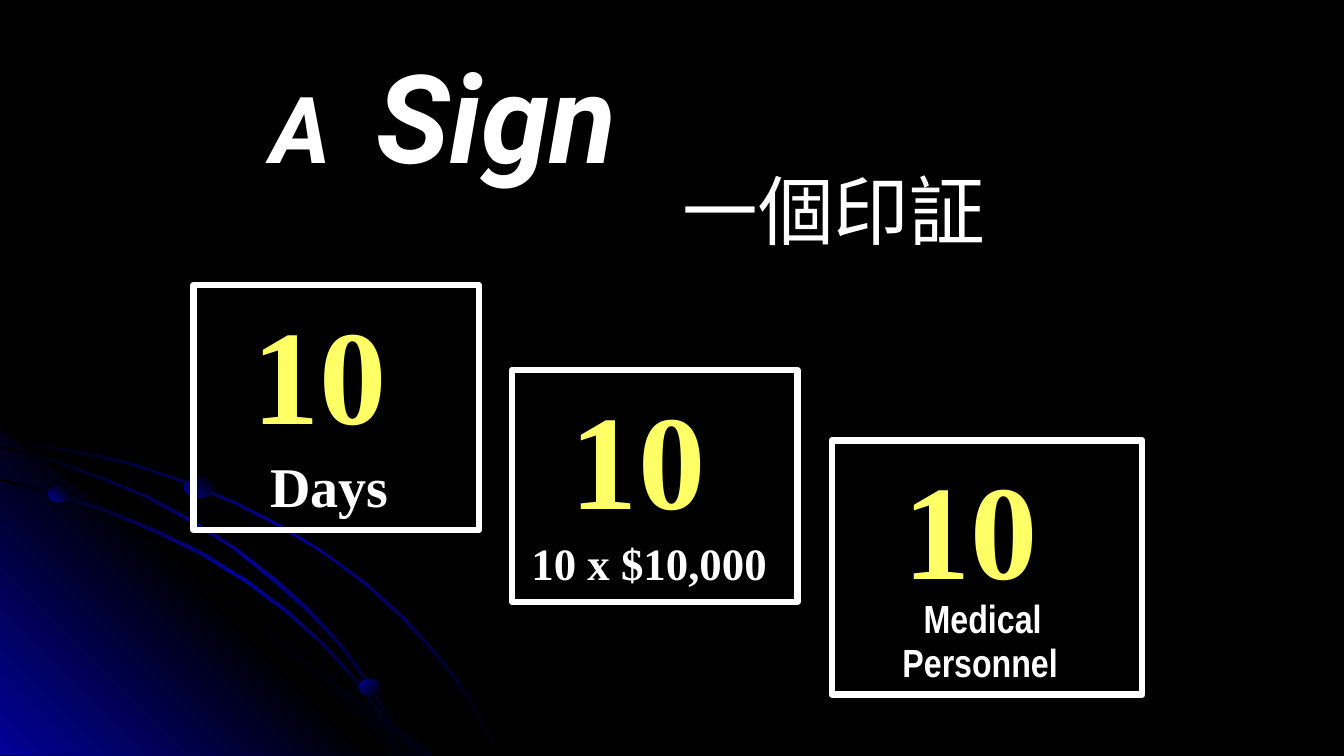
"""Build the 'A Sign' slide: three stepped boxes over a dark sky with blue arcs."""
from lxml.etree import SubElement
from pptx import Presentation
from pptx.dml.color import RGBColor
from pptx.enum.shapes import MSO_SHAPE
from pptx.enum.text import MSO_ANCHOR, PP_ALIGN
from pptx.oxml.ns import qn
from pptx.util import Inches, Pt

THEME = {
    "night": "000000", "blue": "010199", "white": "FFFFFF", "yellow": "FFFF66",
    "serif": "Times New Roman", "sans": "Arial", "narrow": "Arial Narrow",
    "display": "Roboto", "cjk": "Noto Sans CJK JP",
    "number": 96, "sign": 88, "article": 66, "gap": 60, "chinese": 54,
    "days": 40, "money": 32, "staff": 28, "border": 4.5,
}

GLOW = [(0, "night"), (50, "blue"), (100, "night")]
HAZE = [(0, "blue"), (50, "night"), (100, "blue")]
ORB = [(0, "blue"), (100, "night")]

SCENERY = [
    (GLOW, 45, [
        (0.76, 4.47), (0.37, 4.41), (0, 4.35), (0, 4.38), (0.37, 4.43), (0.75, 4.49),
        (1.29, 4.61), (1.8, 4.78), (2.31, 4.99), (2.78, 5.23), (3.21, 5.49), (3.61, 5.79),
        (3.97, 6.12), (4.31, 6.49), (4.5, 6.73), (4.67, 6.98), (4.81, 7.23), (4.93, 7.49),
        (4.96, 7.49), (4.83, 7.23), (4.69, 6.98), (4.53, 6.73), (4.33, 6.48), (4, 6.11),
        (3.63, 5.78), (3.22, 5.48), (2.79, 5.21), (2.32, 4.97), (1.82, 4.77), (1.31, 4.59)]),
    (HAZE, 315, [(4.29, 7.49), (0, 7.49), (0, 4.27)]),
    (GLOW, 45, [
        (3.8, 7.14), (3.92, 7.32), (4.01, 7.49), (4.04, 7.49), (3.94, 7.3), (3.82, 7.12),
        (3.55, 6.76), (3.23, 6.4), (2.86, 6.06), (2.46, 5.76), (2.03, 5.49), (1.56, 5.26),
        (1.05, 5.05), (0.54, 4.88), (0, 4.75), (0, 4.77), (0.51, 4.9), (1.03, 5.07),
        (1.53, 5.28), (2, 5.51), (2.44, 5.78), (2.84, 6.08), (3.21, 6.41), (3.53, 6.77)]),
    (GLOW, 45, [
        (0, 4.42), (0, 4.44), (0.49, 4.57), (0.99, 4.75), (1.46, 4.94), (1.89, 5.18),
        (2.31, 5.44), (2.69, 5.75), (3.03, 6.05), (3.37, 6.41), (3.56, 6.67), (3.74, 6.94),
        (3.89, 7.22), (4.01, 7.49), (4.04, 7.49), (3.91, 7.2), (3.76, 6.93), (3.58, 6.65),
        (3.39, 6.39), (3.06, 6.03), (2.72, 5.73), (2.33, 5.43), (1.91, 5.16), (1.49, 4.93),
        (1.01, 4.73), (0.51, 4.55)]),
]
ORBS = [
    (315, (0.48, 4.83, 0.2, 0.15)),
    (45, (3.56, 6.74, 0.21, 0.16)),
    (315, (1.83, 4.73, 0.28, 0.21)),
]

TEN = [("10 ", "number", "serif", "yellow", "b")]
BOXES = [
    ((1.92, 2.83, 2.83, 2.43), 1, [TEN, [("Days ", "days", "serif", "white", "b")]]),
    ((5.08, 3.67, 2.83, 2.3), 1, [TEN, [("10 x $10,000 ", "money", "serif", "white", "b")]]),
    ((8.25, 4.37, 3.08, 2.52), 0.7, [
        TEN,
        [("Medical ", "staff", "narrow", "white", "b")],
        [("Personnel", "staff", "narrow", "white", "b"),
         (" ", "days", "serif", "yellow", "b")]]),
]
BOX_LEAD = 11

TITLE = ((2.58, 0.35, 7, 1.58), [
    ("A ", "article", "display", "white", "bi"),
    (" ", "gap", "sans", "white", "i"),
    ("Sign", "sign", "display", "white", "bi")])
TITLE_LEAD = 6
CHINESE = ((6.67, 1.58, 3.23, 1.01), [("一個印証", "chinese", "cjk", "white", "")])


def color(key):
    return RGBColor.from_string(THEME[key])


def paint_gradient(shape, stops, angle):
    shape.shadow.inherit = False
    shape.line.fill.background()
    shape.fill.gradient()
    gradient = shape.fill._xPr.find(qn("a:gradFill"))
    for child in list(gradient):
        gradient.remove(child)
    stop_list = SubElement(gradient, qn("a:gsLst"))
    for position, key in stops:
        stop = SubElement(stop_list, qn("a:gs"), pos=str(position * 1000))
        SubElement(stop, qn("a:srgbClr"), val=THEME[key])
    SubElement(gradient, qn("a:lin"), ang=str(angle * 60000), scaled="0")


def write_runs(paragraph, runs):
    for text, size, face, ink, style in runs:
        run = paragraph.add_run()
        run.text = text
        font = run.font
        font.size = Pt(THEME[size])
        font.name = THEME[face]
        font.color.rgb = color(ink)
        font.bold = "b" in style
        font.italic = "i" in style
        SubElement(run._r.get_or_add_rPr(), qn("a:ea"), typeface=THEME[face])


def add_scenery(slide):
    for stops, angle, outline in SCENERY:
        points = [(Inches(x), Inches(y)) for x, y in outline]
        builder = slide.shapes.build_freeform(*points[0])
        builder.add_line_segments(points[1:], close=True)
        paint_gradient(builder.convert_to_shape(), stops, angle)
    for angle, place in ORBS:
        orb = slide.shapes.add_shape(MSO_SHAPE.OVAL, *map(Inches, place))
        paint_gradient(orb, ORB, angle)


def add_box(slide, place, caption_spacing, lines):
    box = slide.shapes.add_shape(MSO_SHAPE.RECTANGLE, *map(Inches, place))
    box.shadow.inherit = False
    box.fill.background()
    box.line.color.rgb = color("white")
    box.line.width = Pt(THEME["border"])
    frame = box.text_frame
    frame.word_wrap = True
    frame.vertical_anchor = MSO_ANCHOR.TOP
    for index, runs in enumerate(lines):
        paragraph = frame.add_paragraph() if index else frame.paragraphs[0]
        paragraph.alignment = PP_ALIGN.CENTER
        if index:
            paragraph.line_spacing = caption_spacing
        else:
            paragraph.space_before = Pt(BOX_LEAD)
        write_runs(paragraph, runs)


def add_heading(slide, place, runs, lead=0, wrap=True):
    frame = slide.shapes.add_textbox(*map(Inches, place)).text_frame
    frame.word_wrap = wrap
    frame.paragraphs[0].space_before = Pt(lead)
    write_runs(frame.paragraphs[0], runs)


def main():
    deck = Presentation()
    deck.slide_width, deck.slide_height = Inches(13.33), Inches(7.5)
    slide = deck.slides.add_slide(deck.slide_layouts[6])
    slide.background.fill.solid()
    slide.background.fill.fore_color.rgb = color("night")
    add_scenery(slide)
    for box in BOXES:
        add_box(slide, *box)
    add_heading(slide, *TITLE, lead=TITLE_LEAD)
    add_heading(slide, *CHINESE, wrap=False)
    deck.save("out.pptx")


if __name__ == "__main__":
    main()
